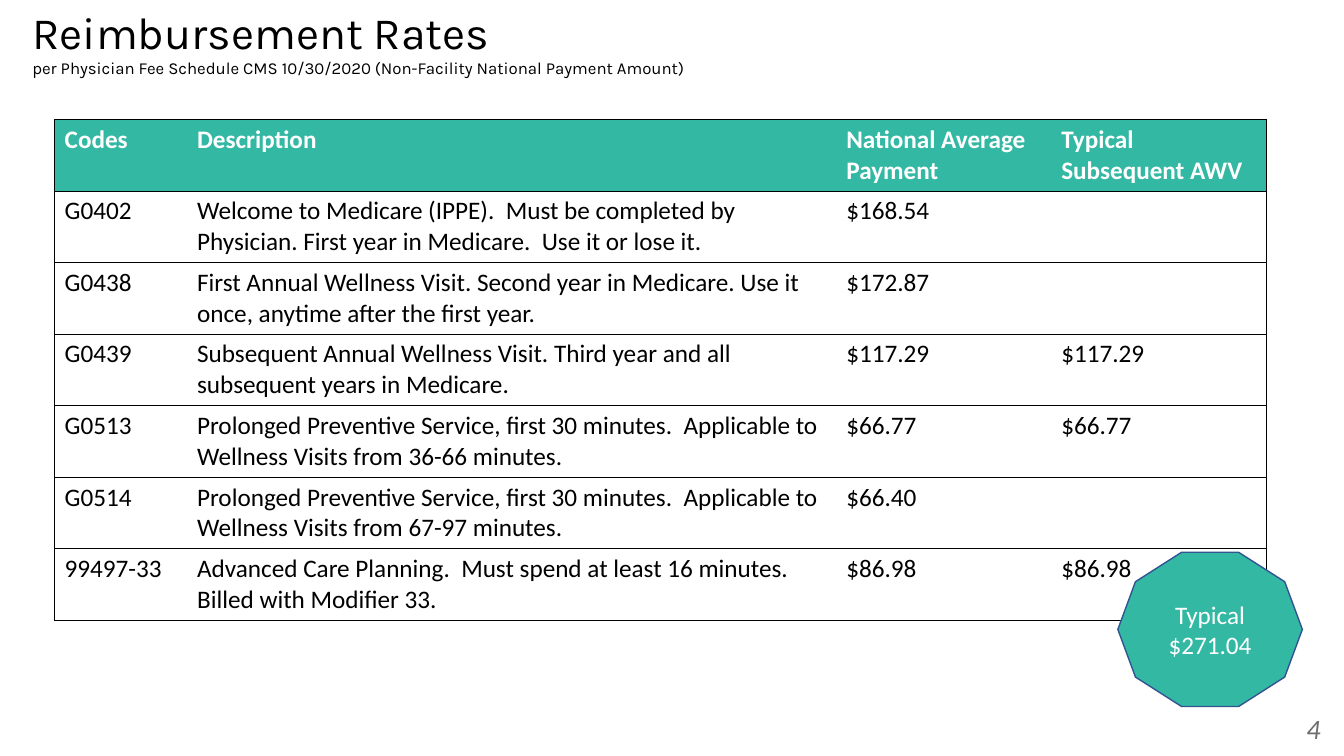
import pptx
import pptx.dml.color
import pptx.enum.shapes
import pptx.enum.text
import pptx.oxml
import pptx.oxml.ns
import pptx.util

Pt = pptx.util.Pt
RGBColor = pptx.dml.color.RGBColor
ALIGN = pptx.enum.text.PP_ALIGN
ANCHOR = pptx.enum.text.MSO_ANCHOR

TEAL = RGBColor(0x33, 0xB8, 0xA4)
NAVY = RGBColor(0x32, 0x54, 0x91)
GRAY = RGBColor(0x6D, 0x6D, 0x6C)
BLACK = RGBColor(0, 0, 0)
WHITE = RGBColor(255, 255, 255)


def add_run(paragraph, text, color, **formats):
    run = paragraph.add_run()
    run.text = text
    run.font.color.rgb = color
    for name, value in ({"name": "Calibri", "size": Pt(18)} | formats).items():
        setattr(run.font, name, value)


def set_border(cell, side, visible):
    paint = f'<a:solidFill><a:srgbClr val="{BLACK}"/></a:solidFill>' if visible else "<a:noFill/>"
    namespace = pptx.oxml.ns.nsdecls("a")
    border = f'<a:ln{side} {namespace} w="{Pt(0.5)}">{paint}</a:ln{side}>'
    cell._tc.get_or_add_tcPr().append(pptx.oxml.parse_xml(border))


presentation = pptx.Presentation()
presentation.slide_width = Pt(960)
presentation.slide_height = Pt(540)
slide = presentation.slides.add_slide(presentation.slide_layouts[6])

title = slide.shapes.add_textbox(Pt(16), Pt(14.4), Pt(828), Pt(34.6))
title.text_frame.word_wrap = True
title.text_frame.vertical_anchor = ANCHOR.MIDDLE
paragraph = title.text_frame.paragraphs[0]
paragraph.line_spacing = 0.9
add_run(paragraph, "Reimbursement Rates", BLACK, name="Karla", size=Pt(32))
paragraph.add_line_break()
add_run(
    paragraph,
    "per Physician Fee Schedule CMS 10/30/2020 (Non-Facility National Payment Amount)",
    BLACK, name="Karla", size=Pt(12),
)

page_number = slide.shapes.add_textbox(Pt(734.4), Pt(504.7), Pt(216), Pt(28.8))
page_number.text_frame.word_wrap = True
paragraph = page_number.text_frame.paragraphs[0]
paragraph.alignment = ALIGN.RIGHT
add_run(paragraph, "4", GRAY, size=Pt(20), italic=True)

rates = [
    ("Codes", "Description", "National Average Payment", "Typical Subsequent AWV"),
    ("G0402", "Welcome to Medicare (IPPE).  Must be completed by Physician. "
     "First year in Medicare.  Use it or lose it.", "$168.54", ""),
    ("G0438", "First Annual Wellness Visit. Second year in Medicare. "
     "Use it once, anytime after the first year.", "$172.87", ""),
    ("G0439", "Subsequent Annual Wellness Visit. Third year and all "
     "subsequent years in Medicare.", "$117.29", "$117.29"),
    ("G0513", "Prolonged Preventive Service, first 30 minutes.  "
     "Applicable to Wellness Visits from 36-66 minutes.", "$66.77", "$66.77"),
    ("G0514", "Prolonged Preventive Service, first 30 minutes.  "
     "Applicable to Wellness Visits from 67-97 minutes.", "$66.40", ""),
    ("99497-33", "Advanced Care Planning.  Must spend at least 16 minutes.  "
     "Billed with Modifier 33.", "$86.98", "$86.98"),
]
column_widths = [94.6, 463.8, 153.5, 153.5]
row_height = 51.1

table = slide.shapes.add_table(
    len(rates), len(column_widths), Pt(39), Pt(85.3),
    Pt(sum(column_widths)), Pt(row_height * len(rates)),
).table
for column, width in zip(table.columns, column_widths):
    column.width = Pt(width)
for row_index, texts in enumerate(rates):
    table.rows[row_index].height = Pt(row_height)
    header = row_index == 0
    for column_index, text in enumerate(texts):
        cell = table.cell(row_index, column_index)
        set_border(cell, "L", column_index == 0)
        set_border(cell, "R", column_index == len(texts) - 1)
        set_border(cell, "T", True)
        set_border(cell, "B", True)
        if header:
            cell.fill.solid()
            cell.fill.fore_color.rgb = TEAL
        else:
            cell.fill.background()
        if text:
            add_run(cell.text_frame.paragraphs[0], text, WHITE if header else BLACK, bold=header)

badge = slide.shapes.add_shape(
    pptx.enum.shapes.MSO_SHAPE.DECAGON, Pt(798.5), Pt(394.5), Pt(131.8), Pt(110.2)
)
badge.shadow.inherit = False
badge.fill.solid()
badge.fill.fore_color.rgb = TEAL
badge.line.color.rgb = NAVY
badge.line.width = Pt(1)
badge.text_frame.vertical_anchor = ANCHOR.MIDDLE
badge.text_frame.text = "\n"
for paragraph, text in zip(badge.text_frame.paragraphs, ["Typical", "$271.04"]):
    paragraph.alignment = ALIGN.CENTER
    add_run(paragraph, text, WHITE)

presentation.save("out.pptx")
